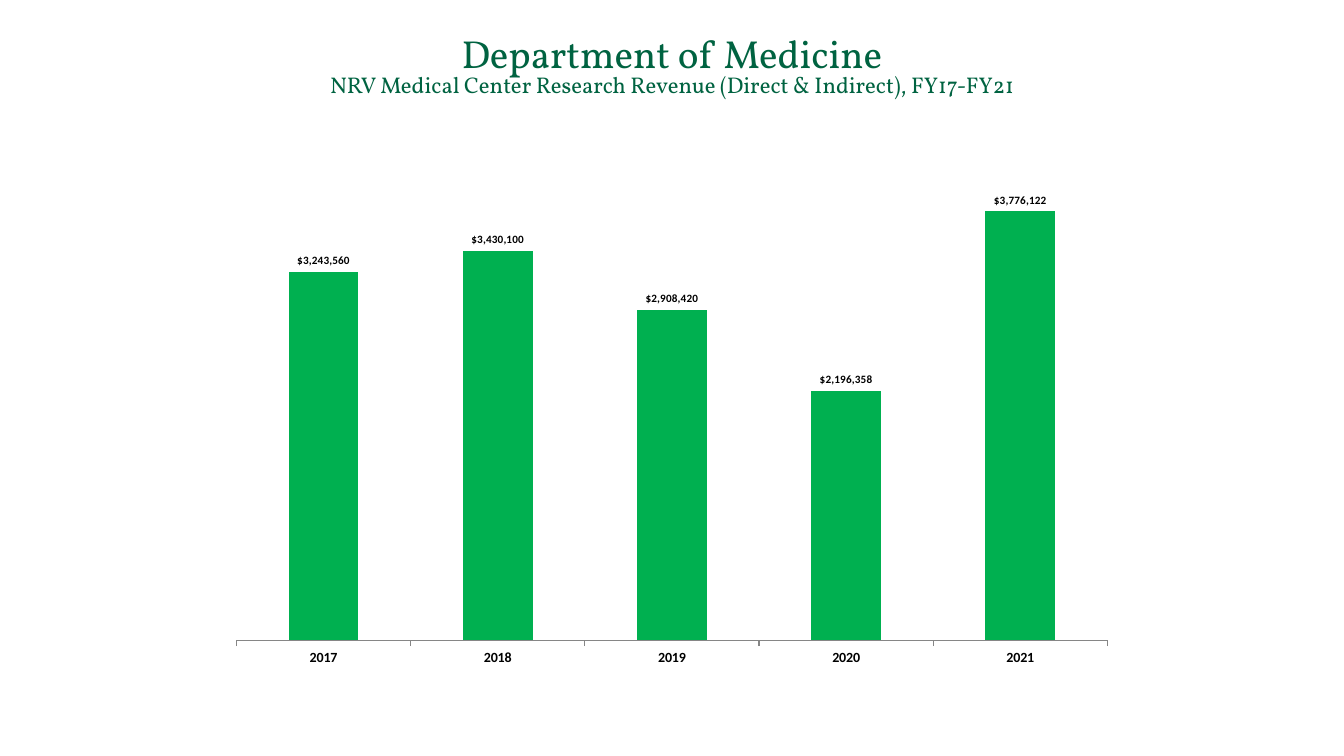
from lxml import etree
from pptx import Presentation
from pptx.chart.data import CategoryChartData
from pptx.dml.color import RGBColor
from pptx.enum.chart import XL_CHART_TYPE, XL_LABEL_POSITION, XL_TICK_LABEL_POSITION, XL_TICK_MARK
from pptx.enum.text import MSO_ANCHOR, PP_ALIGN
from pptx.oxml.ns import qn
from pptx.util import Inches, Pt

COLUMNS = XL_CHART_TYPE.COLUMN_CLUSTERED
OUTSIDE_END = XL_LABEL_POSITION.OUTSIDE_END
LABELS_LOW = XL_TICK_LABEL_POSITION.LOW
TICK_OUT, TICK_NONE = XL_TICK_MARK.OUTSIDE, XL_TICK_MARK.NONE
MIDDLE, CENTER = MSO_ANCHOR.MIDDLE, PP_ALIGN.CENTER

HEADING_GREEN = RGBColor(0x00, 0x63, 0x41)
BAR_GREEN = RGBColor(0x00, 0xB0, 0x50)
AXIS_GRAY = RGBColor(0x86, 0x86, 0x86)
BLACK = RGBColor(0, 0, 0)

SLIDE_W, SLIDE_H = Inches(13.33), Inches(7.5)
HEADING_LINES = [
    ("Department of Medicine", 27.9),
    ("NRV Medical Center Research Revenue (Direct & Indirect), FY17-FY21", 16.2),
]
REVENUE = {
    "2017": 3243560,
    "2018": 3430100,
    "2019": 2908420,
    "2020": 2196358,
    "2021": 3776122,
}
PLOT_SHARES = {"x": 0.02, "y": 0.02, "w": 0.96, "h": 0.91}


def centred_box(top, width, height):
    """Left, top, width and height, from shares of the slide's size."""
    return [int(SLIDE_W * (1 - width) / 2), int(SLIDE_H * top),
            int(SLIDE_W * width), int(SLIDE_H * height)]


def style_font(font, size, color, name, bold=False):
    font.size = Pt(size)
    font.color.rgb = color
    font.name = name
    font.bold = bold


def add_heading(slide, box):
    frame = slide.shapes.add_textbox(*box).text_frame
    frame.word_wrap = True
    frame.vertical_anchor = MIDDLE
    frame.margin_top = frame.margin_bottom = 0
    frame.text = "\n".join(text for text, _ in HEADING_LINES)
    for paragraph, (_, size) in zip(frame.paragraphs, HEADING_LINES):
        paragraph.alignment = CENTER
        paragraph.line_spacing = 0.8
        style_font(paragraph.runs[0].font, size, HEADING_GREEN, "Vollkorn")


def fix_plot_area(chart):
    """Place the inner plot area by shares of the chart's size."""
    plot_area = chart.plots[0]._element.getparent()
    for old_layout in plot_area.findall(qn("c:layout")):
        plot_area.remove(old_layout)
    layout = etree.Element(qn("c:layout"))
    manual = etree.SubElement(layout, qn("c:manualLayout"))
    settings = {"layoutTarget": "inner", "xMode": "edge", "yMode": "edge", **PLOT_SHARES}
    for tag, value in settings.items():
        etree.SubElement(manual, qn(f"c:{tag}")).set("val", str(value))
    plot_area.insert(0, layout)


def add_revenue_chart(slide, box):
    revenue_data = CategoryChartData(number_format='"$"#,##0')
    revenue_data.categories = list(REVENUE)
    revenue_data.add_series("Series 1", list(REVENUE.values()))
    chart = slide.shapes.add_chart(COLUMNS, *box, revenue_data).chart
    chart.has_legend = False
    chart.has_title = False
    style_font(chart.font, 10, BLACK, "Calibri")

    years = chart.category_axis
    years.major_tick_mark = TICK_OUT
    years.minor_tick_mark = TICK_NONE
    years.tick_label_position = LABELS_LOW
    years.has_major_gridlines = False
    years.format.line.color.rgb = AXIS_GRAY
    years.format.line.width = Pt(0.75)
    style_font(years.tick_labels.font, 10, BLACK, "Calibri", bold=True)

    dollars = chart.value_axis
    dollars.visible = False
    dollars.has_major_gridlines = False
    dollars.minimum_scale, dollars.maximum_scale = 0, 4000000

    bars = chart.plots[0]
    bars.gap_width = 150
    bars.vary_by_categories = False
    revenue = bars.series[0]
    revenue.format.fill.solid()
    revenue.format.fill.fore_color.rgb = BAR_GREEN
    amounts = revenue.data_labels
    amounts.show_value = True
    amounts.position = OUTSIDE_END
    amounts.number_format = '"$"#,##0'
    amounts.number_format_is_linked = False
    style_font(amounts.font, 8, BLACK, "Calibri", bold=True)
    fix_plot_area(chart)


def main():
    deck = Presentation()
    deck.slide_width, deck.slide_height = SLIDE_W, SLIDE_H
    slide = deck.slides.add_slide(deck.slide_layouts[6])
    add_heading(slide, centred_box(top=0.045, width=0.9, height=0.09))
    add_revenue_chart(slide, centred_box(top=0.233, width=0.675, height=0.66))
    deck.save("out.pptx")


if __name__ == "__main__":
    main()
